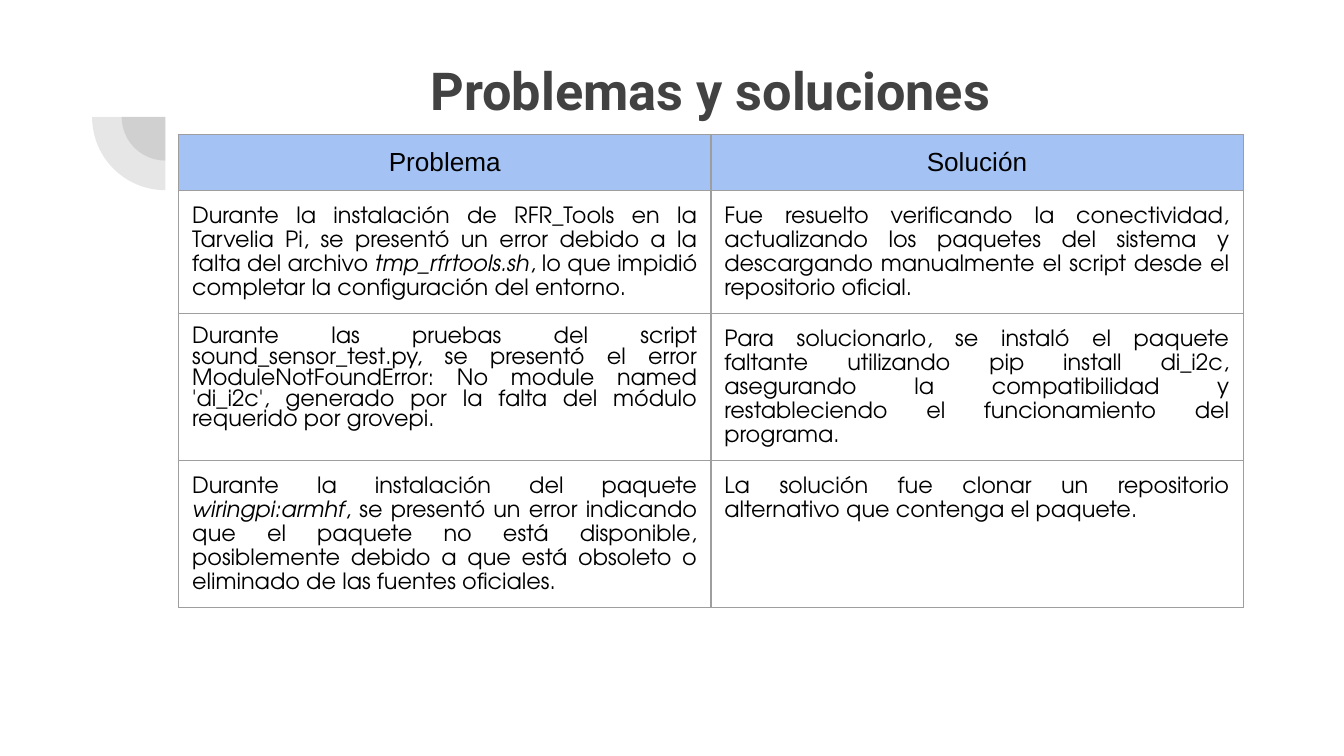
from lxml import etree
from pptx import Presentation
from pptx.dml.color import RGBColor
from pptx.enum.shapes import MSO_SHAPE
from pptx.enum.text import MSO_ANCHOR, MSO_AUTO_SIZE, PP_ALIGN
from pptx.oxml.ns import qn
from pptx.util import Inches, Pt

CENTER, JUSTIFY = PP_ALIGN.CENTER, PP_ALIGN.JUSTIFY
PIE = MSO_SHAPE.PIE

COLORS = {"dark": "424242", "black": "000000", "header": "A4C2F4", "border": "9E9E9E"}

TITLE = "Problemas y soluciones"
HEADERS = ["Problema", "Solución"]
LOOSE = {"line_spacing": 1.15, "space_after": 10}
# Each cell: runs of (text, italic), then paragraph spacing.
ROWS = [
    [
        ([("Durante la instalación de RFR_Tools en la Tarvelia Pi, se presentó un error "
           "debido a la falta del archivo ", False),
          ("tmp_rfrtools.sh", True),
          (", lo que impidió completar la configuración del entorno.", False)], LOOSE),
        ([("Fue resuelto verificando la conectividad, actualizando los paquetes del sistema "
           "y descargando manualmente el script desde el repositorio oficial.", False)], LOOSE),
    ],
    [
        ([("Durante las pruebas del script sound_sensor_test.py, se presentó el error "
           "ModuleNotFoundError: No module named 'di_i2c', generado por la falta del "
           "módulo requerido por grovepi.", False)], {}),
        ([("Para solucionarlo, se instaló el paquete faltante utilizando pip install di_i2c, "
           "asegurando la compatibilidad y restableciendo el funcionamiento del programa.",
           False)], LOOSE),
    ],
    [
        ([("Durante la instalación del paquete ", False),
          ("wiringpi:armhf", True),
          (", se presentó un error indicando que el paquete no está disponible, posiblemente "
           "debido a que está obsoleto o eliminado de las fuentes oficiales.", False)], LOOSE),
        ([("La solución fue clonar un repositorio alternativo que contenga el paquete.",
           False)], {"line_spacing": 1.15}),
    ],
]

SLIDE_WIDTH = Inches(10)
SLIDE_HEIGHT = SLIDE_WIDTH * 9 // 16
LEFT, TABLE_TOP = 1.33, 1
COLUMN_WIDTH, ROW_HEIGHT = 3.96, 0.42  # rows grow to fit their text
PIE_CENTER = (1.23, 0.87)
PIE_SIZES = [0.65, 1.09]


def rgb(name):
    return RGBColor.from_string(COLORS[name])


def write_text(frame, runs, font, size, color="black", bold=False, align=JUSTIFY,
               line_spacing=None, space_after=None):
    frame.word_wrap = True
    paragraph = frame.paragraphs[0]
    paragraph.alignment = align
    if line_spacing:
        paragraph.line_spacing = line_spacing
    if space_after:
        paragraph.space_after = Pt(space_after)
    for text, italic in runs:
        run = paragraph.add_run()
        run.text = text
        run.font.name, run.font.size = font, Pt(size)
        run.font.bold, run.font.italic = bold, italic
        run.font.color.rgb = rgb(color)


def set_margins(target):
    target.margin_left = target.margin_right = Inches(0.1)
    target.margin_top = target.margin_bottom = Inches(0.1)


def add_borders(cell):
    properties = cell._tc.get_or_add_tcPr()
    for index, side in enumerate(["lnL", "lnR", "lnT", "lnB"]):
        line = etree.Element(qn(f"a:{side}"), w=str(Pt(0.75)))
        fill = etree.SubElement(line, qn("a:solidFill"))
        etree.SubElement(fill, qn("a:srgbClr"), val=COLORS["border"])
        properties.insert(index, line)


def add_quarter_pie(slide, size):
    left, top = (Inches(center - size / 2) for center in PIE_CENTER)
    pie = slide.shapes.add_shape(PIE, left, top, Inches(size), Inches(size))
    pie.shadow.inherit = False
    pie.rotation = 270
    pie.adjustments[0], pie.adjustments[1] = 107.93, 162
    pie.fill.solid()
    pie.fill.fore_color.rgb = rgb("dark")
    color = pie.fill._xPr.find(qn("a:solidFill"))[0]
    etree.SubElement(color, qn("a:alpha"), val="13000")
    pie.line.fill.background()


def add_title(slide):
    title = slide.shapes.title
    title.left, title.top = Inches(LEFT), Inches(0.33)
    title.width, title.height = Inches(7.91), Inches(0.67)
    frame = title.text_frame
    set_margins(frame)
    frame.auto_size = MSO_AUTO_SIZE.NONE
    frame.vertical_anchor = MSO_ANCHOR.TOP
    write_text(frame, [(TITLE, False)], font="Roboto", size=28, color="dark",
               bold=True, align=CENTER)


def add_problem_table(slide):
    row_count = len(ROWS) + 1
    table = slide.shapes.add_table(
        row_count, len(HEADERS), Inches(LEFT), Inches(TABLE_TOP),
        Inches(COLUMN_WIDTH * len(HEADERS)), Inches(ROW_HEIGHT * row_count)).table
    table.first_row = table.horz_banding = False
    for column in table.columns:
        column.width = Inches(COLUMN_WIDTH)
    for row in table.rows:
        row.height = Inches(ROW_HEIGHT)
    for cell in table.iter_cells():
        set_margins(cell)
        cell.fill.background()
        add_borders(cell)
    for cell, header in zip(table.rows[0].cells, HEADERS):
        cell.fill.solid()
        cell.fill.fore_color.rgb = rgb("header")
        write_text(cell.text_frame, [(header, False)], font="Arial", size=14, align=CENTER)
    for row_index, contents in enumerate(ROWS, start=1):
        for cell, (runs, spacing) in zip(table.rows[row_index].cells, contents):
            write_text(cell.text_frame, runs, font="TeX Gyre Adventor", size=12, **spacing)


def main():
    presentation = Presentation()
    presentation.slide_width, presentation.slide_height = SLIDE_WIDTH, SLIDE_HEIGHT
    slide = presentation.slides.add_slide(presentation.slide_layouts[5])
    for size in PIE_SIZES:
        add_quarter_pie(slide, size)
    add_problem_table(slide)
    add_title(slide)
    presentation.save("out.pptx")


if __name__ == "__main__":
    main()
